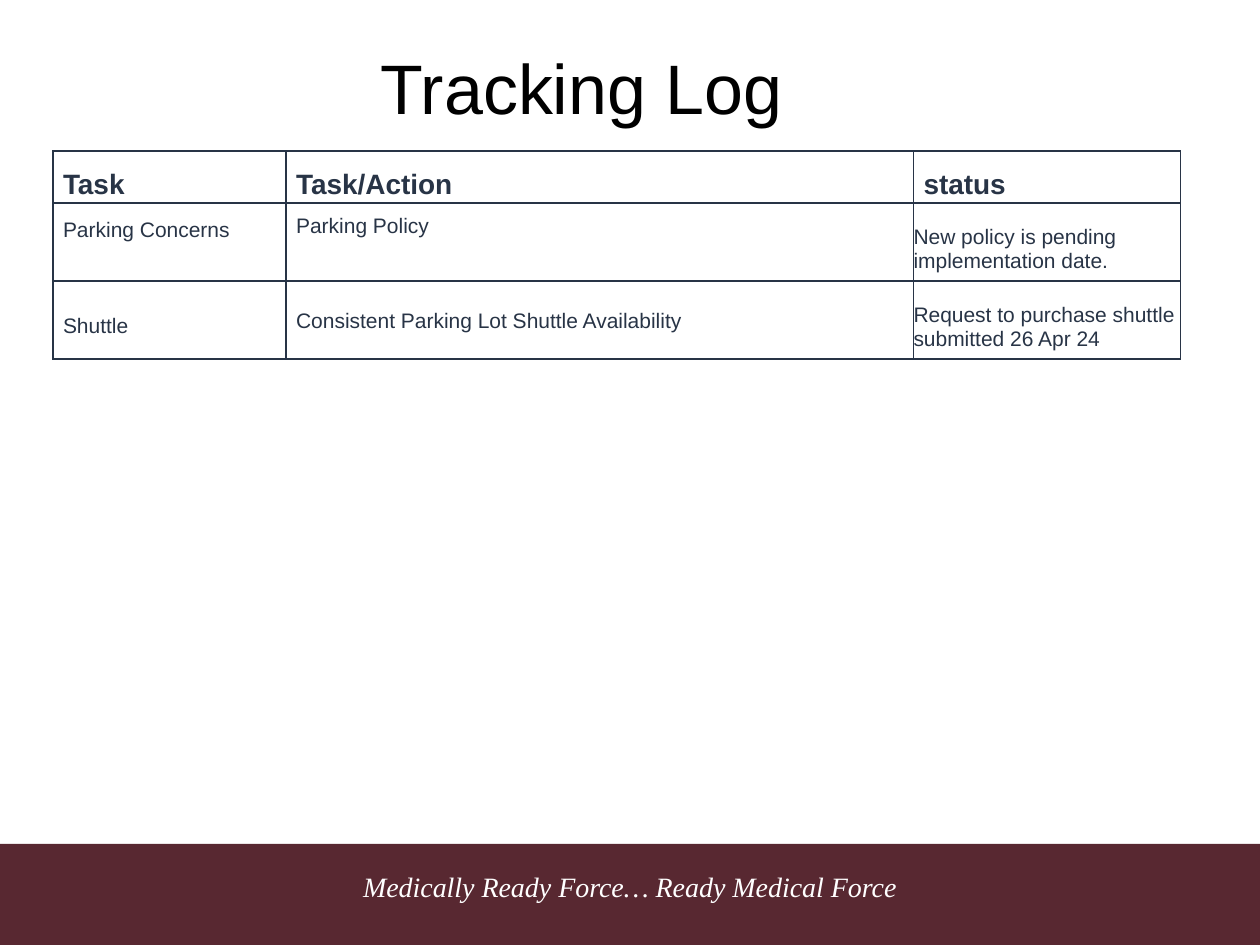
from collections import namedtuple

from lxml import etree
from pptx import Presentation
from pptx.dml.color import RGBColor
from pptx.enum.shapes import MSO_SHAPE
from pptx.enum.text import MSO_ANCHOR, PP_ALIGN
from pptx.oxml.ns import qn
from pptx.util import Inches, Pt

RECTANGLE = MSO_SHAPE.RECTANGLE
TOP, MIDDLE = MSO_ANCHOR.TOP, MSO_ANCHOR.MIDDLE
LEFT, CENTER = PP_ALIGN.LEFT, PP_ALIGN.CENTER

MAROON = RGBColor(0x58, 0x28, 0x31)
NAVY = RGBColor(0x28, 0x34, 0x46)
WHITE = RGBColor(0xFF, 0xFF, 0xFF)
BLACK = RGBColor(0x00, 0x00, 0x00)

SLIDE = (Inches(10), Inches(7.5))
COLUMN_SHARES = (1.85, 4.98, 2.12)
ROW_SHARES = (0.41, 0.62, 0.62)
INDENT = 0.08

Box = namedtuple("Box", "left top width height")
Entry = namedtuple("Entry", "text drop indent")

LOG = (
    (Entry("Task", 0.14, INDENT), Entry("Task/Action", 0.14, INDENT),
     Entry("status", 0.14, INDENT)),
    (Entry("Parking Concerns", 0.12, INDENT), Entry("Parking Policy", 0.09, INDENT),
     Entry("New policy is pending implementation date.", 0.18, 0)),
    (Entry("Shuttle", 0.27, INDENT),
     Entry("Consistent Parking Lot Shuttle Availability", 0.23, INDENT),
     Entry("Request to purchase shuttle submitted 26 Apr 24", 0.18, 0)),
)


def part(box, left, top, width, height):
    """Return the box that covers the given shares of another box."""
    return Box(int(box.left + left * box.width), int(box.top + top * box.height),
               int(width * box.width), int(height * box.height))


def write(frame, text, size, color, align=LEFT, name="Arial", bold=False, italic=False):
    """Write one formatted run in the first paragraph of a frame."""
    para = frame.paragraphs[0]
    para.alignment = align
    span = para.add_run()
    span.text = text
    span.font.name = name
    span.font.size = Pt(size)
    span.font.color.rgb = color
    span.font.bold = bold
    span.font.italic = italic


def add_text(page, box, anchor, *args, **style):
    """Add a wrapped text box with one run."""
    frame = page.shapes.add_textbox(*box).text_frame
    frame.word_wrap = True
    frame.vertical_anchor = anchor
    write(frame, *args, **style)


def outline(cell):
    """Draw a thin navy line on each side of a cell."""
    properties = cell._tc.get_or_add_tcPr()
    for place, side in enumerate(("a:lnL", "a:lnR", "a:lnT", "a:lnB")):
        line = etree.Element(qn(side), w=str(Pt(1)))
        fill = etree.SubElement(line, qn("a:solidFill"))
        etree.SubElement(fill, qn("a:srgbClr"), val=str(NAVY))
        properties.insert(place, line)


def add_title(page, box):
    """Place the slide title in the middle of its box."""
    add_text(page, box, MIDDLE, "Tracking Log", 40, BLACK, align=CENTER)


def add_log(page, box):
    """Place the tracking table, its columns and rows sharing the box."""
    table = page.shapes.add_table(len(ROW_SHARES), len(COLUMN_SHARES), *box).table
    table.horz_banding = False
    for column, share in zip(table.columns, COLUMN_SHARES):
        column.width = int(box.width * share / sum(COLUMN_SHARES))
    for row, share in zip(table.rows, ROW_SHARES):
        row.height = int(box.height * share / sum(ROW_SHARES))
    for number, entries in enumerate(LOG):
        header = number == 0
        for cell, entry in zip(table.rows[number].cells, entries):
            cell.fill.background()
            cell.margin_left = Inches(entry.indent)
            cell.margin_top = Inches(entry.drop)
            cell.margin_right = cell.margin_bottom = 0
            cell.vertical_anchor = TOP
            write(cell.text_frame, entry.text, 16 if header else 12, NAVY, bold=header)
            outline(cell)


def add_footer(page, box):
    """Place the maroon band and its motto."""
    band = page.shapes.add_shape(RECTANGLE, *box)
    band.shadow.inherit = False
    band.fill.solid()
    band.fill.fore_color.rgb = MAROON
    band.line.fill.background()
    add_text(page, part(box, 0.13, 0.19, 0.74, 0.71), TOP,
             "Medically Ready Force… Ready Medical Force", 16, WHITE,
             align=CENTER, name="Times New Roman", italic=True)


def main():
    """Build the tracking log slide."""
    deck = Presentation()
    deck.slide_width, deck.slide_height = SLIDE
    page = deck.slides.add_slide(deck.slide_layouts[6])
    whole = Box(0, 0, *SLIDE)
    add_footer(page, part(whole, 0, 0.893, 1, 0.107))
    add_log(page, part(whole, 0.042, 0.16, 0.895, 0.22))
    add_title(page, part(whole, 0.042, 0.037, 0.839, 0.11))
    deck.save("out.pptx")


if __name__ == "__main__":
    main()
